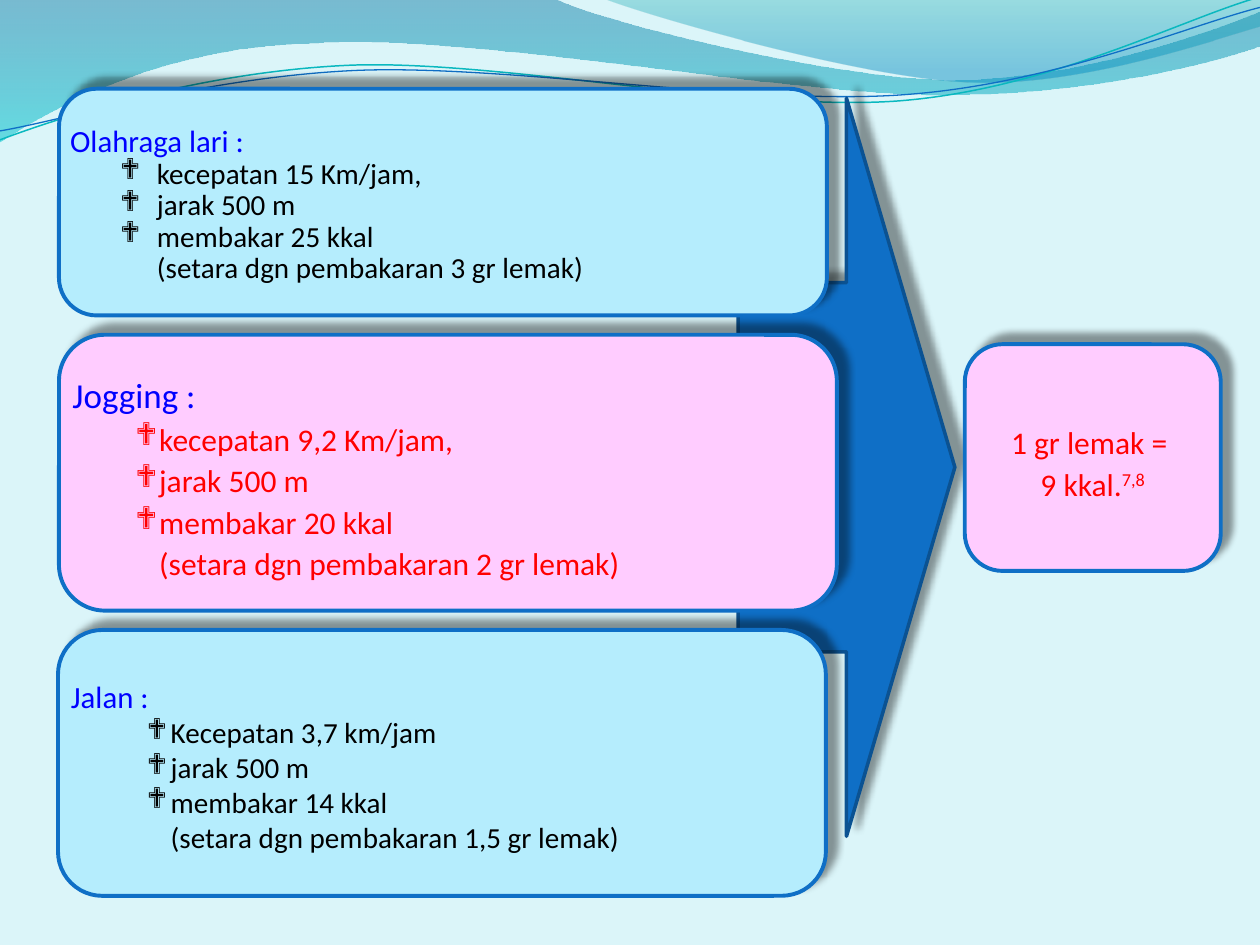
from lxml.etree import SubElement
from pptx import Presentation
from pptx.dml.color import RGBColor
from pptx.enum.shapes import MSO_SHAPE
from pptx.enum.text import MSO_ANCHOR, PP_ALIGN
from pptx.oxml.ns import qn
from pptx.util import Cm, Pt

BACKDROP = RGBColor(0xDB, 0xF5, 0xF9)
BLUE = RGBColor(0x0F, 0x6F, 0xC6)
DARK_BLUE = RGBColor(0x0B, 0x52, 0x92)
TEAL = RGBColor(0x0A, 0xB8, 0xBF)
WAVE_BLUE = RGBColor(0x00, 0x74, 0xA1)
WAVE_CYAN = RGBColor(0x00, 0xC6, 0xCF)
CREST_TEAL = RGBColor(0x00, 0xA1, 0xA9)
CREST_BLUE = RGBColor(0x00, 0x8B, 0xBF)
PALE_BLUE = RGBColor(0xB5, 0xED, 0xFD)
PINK = RGBColor(0xFF, 0xCC, 0xFF)
TITLE_BLUE = RGBColor(0x00, 0x00, 0xFF)
RED = RGBColor(0xFF, 0x00, 0x00)
BLACK = RGBColor(0x00, 0x00, 0x00)

deck = Presentation()
deck.slide_width, deck.slide_height = Cm(25.4), Cm(19.05)
page = deck.slides.add_slide(deck.slide_layouts[6])
page.background.fill.solid()
page.background.fill.fore_color.rgb = BACKDROP


def add_wave(shapes, start, segments, close):
    """Draw segments in cm: one point is a straight line, three are a Bézier curve."""
    builder = shapes.build_freeform(Cm(start[0]), Cm(start[1]))
    points = [(Cm(x), Cm(y)) for segment in segments for x, y in segment]
    builder.add_line_segments(points, close=close)
    wave = builder.convert_to_shape()
    wave.shadow.inherit = False
    lines = iter(list(wave._element.iter(qn("a:lnTo"))))
    for segment in segments:
        pieces = [next(lines) for _ in segment]
        if len(pieces) == 3:
            curve = pieces[0]
            curve.tag = qn("a:cubicBezTo")
            for piece in pieces[1:]:
                curve.append(piece[0])
                piece.getparent().remove(piece)
    return wave


def add_shadowed(kind, place, fill, line, width):
    shape = page.shapes.add_shape(kind, *[Cm(length) for length in place])
    shape.fill.solid()
    shape.fill.fore_color.rgb = fill
    shape.line.color.rgb = line
    shape.line.width = Pt(width)
    shape.shadow.inherit = False
    effects = shape._element.spPr.find(qn("a:effectLst"))
    shadow = SubElement(effects, qn("a:outerShdw"), blurRad=str(Pt(4)), dist=str(Pt(8)),
                        dir="18900000", algn="bl", rotWithShape="0")
    color = SubElement(shadow, qn("a:srgbClr"), val=str(BLACK))
    SubElement(color, qn("a:alpha"), val="40000")
    return shape


# Waves across the top: start, segments, (position, colour, opacity) of each stop
bands = [
    ((0, 0), [
        [(11.18, -0.03)],
        [(12.09, 0.43), (16.87, 1.6), (19.25, 1.6)],
        [(21.67, 1.6), (24.33, 0.66), (25.4, 0.23)],
        [(25.43, 0.91)],
        [(24.97, 1.12), (22.1, 1.93), (18.95, 1.91)],
        [(15.8, 1.91), (9.7, 0.71), (6.53, 0.86)],
        [(3.28, 0.91), (1.17, 2.11), (-0.03, 2.87)],
        [(0, 0)],
    ], [(0, WAVE_BLUE, 45), (1, WAVE_CYAN, 55)]),
    ((12.17, -0.03), [
        [(12.93, 0.28), (17.32, 1.57), (19.53, 1.65)],
        [(21.74, 1.75), (24.41, 0.81), (25.4, 0.53)],
        [(25.4, 0)],
        [(12.17, -0.03)],
    ], [(0, CREST_TEAL, 30), (0.8, CREST_BLUE, 45)]),
]
for start, segments, stops in bands:
    band = add_wave(page.shapes, start, segments, close=True)
    band.line.fill.background()
    band.fill.gradient()
    band.fill.gradient_angle = 270
    for stop, (position, color, _) in zip(band.fill.gradient_stops, stops):
        stop.position = position
        stop.color.rgb = color
    for node, (_, _, opacity) in zip(band._element.spPr.iter(qn("a:srgbClr")), stops):
        SubElement(node, qn("a:alpha"), val=str(opacity * 1000))

# Thin strands, tilted slightly anticlockwise
strands = [
    ((-0.05, 2.22), [
        [(1.19, 1.82), (4.02, 1.04), (7.06, 1.05)],
        [(10.04, 1.07), (15.02, 2.37), (18.07, 2.29)],
        [(21.13, 2.2), (23.87, 0.91), (25.41, 0.55)],
    ], TEAL, 0.85),
    ((-0.04, 2.04), [
        [(1.16, 1.9), (4.18, 1.15), (7.2, 1.16)],
        [(10.25, 1.18), (15.13, 2.25), (18.18, 2.17)],
        [(21.21, 2.1), (23.93, 1.06), (25.45, 0.75)],
    ], BLUE, 0.75),
]
strand_group = page.shapes.add_group_shape()
for start, segments, color, width in strands:
    strand = add_wave(strand_group.shapes, start, segments, close=False)
    strand.rotation = 357.3
    strand.fill.background()
    strand.line.color.rgb = color
    strand.line.width = Pt(width)

add_shadowed(MSO_SHAPE.RIGHT_ARROW, (14.88, 1.98, 4.37, 14.88), BLUE, DARK_BLUE, 2)

# Cards: place, fill, line spacing, alignment, paragraphs.
# Paragraph: runs of (text, raised), size, colour, left margin, hanging, bulleted
cards = [((19.45, 6.94, 5.16, 4.57), PINK, 1.1, PP_ALIGN.CENTER, [
    ([("1 gr lemak = ", False)], 18, RED, 0, 0, False),
    ([("9 kkal.", False), ("7,8", True)], 18, RED, 0, 0, False),
])]
activities = [
    ((1.19, 1.79, 15.48, 4.57), PALE_BLUE, 0.9, 17.6, 16.65, BLACK, 1.75, 0.74, "Olahraga lari :",
     ["kecepatan 15 Km/jam,", "jarak 500 m", "membakar 25 kkal"],
     "\t(setara dgn pembakaran 3 gr lemak)"),
    ((1.19, 6.75, 15.68, 5.56), PINK, 1.1, 20, 18, RED, 1.75, 0.48, "Jogging :",
     ["kecepatan 9,2 Km/jam,", "jarak 500 m", "membakar 20 kkal"],
     "\t(setara dgn pembakaran 2 gr lemak)"),
    ((1.17, 12.7, 15.48, 5.36), PALE_BLUE, 1.0, 17.6, 16.65, BLACK, 2.01, 0.48, "Jalan :",
     ["Kecepatan 3,7 km/jam", "jarak 500 m", "membakar 14 kkal"],
     "\t(setara dgn pembakaran 1,5 gr lemak)"),
]
for place, fill, spacing, title_size, size, color, margin, hanging, title, facts, remark in activities:
    paragraphs = [([(title, False)], title_size, TITLE_BLUE, 0, 0, False)]
    paragraphs += [([(fact, False)], size, color, margin, hanging, True) for fact in facts]
    paragraphs.append(([(remark, False)], size, color, margin, hanging, False))
    cards.append((place, fill, spacing, PP_ALIGN.LEFT, paragraphs))

for place, fill, spacing, alignment, paragraphs in cards:
    box = add_shadowed(MSO_SHAPE.ROUNDED_RECTANGLE, place, fill, BLUE, 2.25)
    frame = box.text_frame
    frame.word_wrap = True
    frame.vertical_anchor = MSO_ANCHOR.MIDDLE
    frame.margin_left = frame.margin_right = frame.margin_bottom = 0
    frame.margin_top = Cm(0.13)
    for index, (runs, size, color, margin, hanging, bulleted) in enumerate(paragraphs):
        para = frame.add_paragraph() if index else frame.paragraphs[0]
        para.alignment = alignment
        para.line_spacing = spacing
        properties = para._p.get_or_add_pPr()
        properties.set("marL", str(Cm(margin)))
        properties.set("indent", str(-Cm(hanging)))
        if bulleted:
            SubElement(properties, qn("a:buFont"), typeface="Wingdings")
            SubElement(properties, qn("a:buChar"), char="❖")
        for text, raised in runs:
            span = para.add_run()
            span.text = text
            span.font.name = "Calibri"
            span.font.size = Pt(size)
            span.font.color.rgb = color
            if raised:
                span._r.get_or_add_rPr().set("baseline", "30000")

deck.save("out.pptx")
